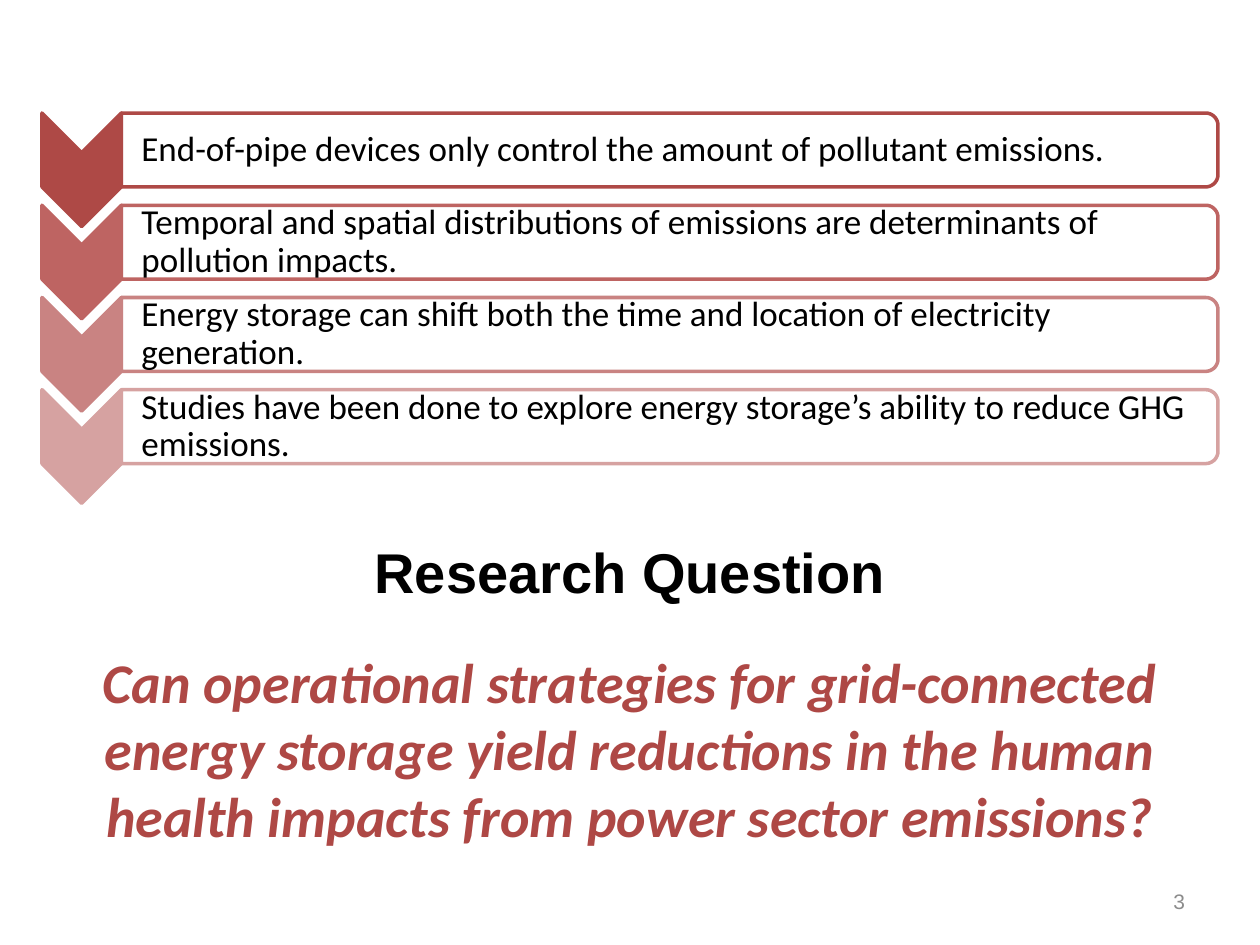
import math
from lxml import etree
from pptx import Presentation
from pptx.dml.color import RGBColor
from pptx.enum import text as t
from pptx.oxml import ns
from pptx.util import Pt

BLACK = RGBColor(0, 0, 0)
WHITE = RGBColor(255, 255, 255)
GRAY = RGBColor(0x8C, 0x8C, 0x8C)
RED = RGBColor(0xAE, 0x48, 0x45)

POINTS = [
    ("End-of-pipe devices only control the amount of pollutant emissions.",
     RGBColor(0xAE, 0x49, 0x46)),
    ("Temporal and spatial distributions of emissions are determinants of pollution impacts.",
     RGBColor(0xBE, 0x64, 0x62)),
    ("Energy storage can shift both the time and location of electricity generation.",
     RGBColor(0xC9, 0x83, 0x82)),
    ("Studies have been done to explore energy storage’s ability to reduce GHG emissions.",
     RGBColor(0xD6, 0xA2, 0xA1)),
]
TITLE = "Research Question"
QUESTION = ("Can operational strategies for grid-connected energy storage yield "
            "reductions in the human health impacts from power sector emissions?")
NUMBER = "3"

LEFT, MID, RIGHT = 24, 69.4, 696
TOP, STEP = 64.6, 52.7
HIGH, TIP, ROUND = 42.2, 22.7, 7


def outline(slide, dots, fill, line):
    dots = [(Pt(x), Pt(y)) for x, y in dots]
    form = slide.shapes.build_freeform(*dots[0], scale=1.0)
    form.add_line_segments(dots[1:], close=True)
    shape = form.convert_to_shape()
    shape.shadow.inherit = False
    shape.fill.solid()
    shape.fill.fore_color.rgb = fill
    shape.line.color.rgb = line
    shape.line.width = Pt(2)
    return shape


def arc(x, y, start):
    """Points of a quarter circle around (x, y), clockwise from start degrees."""
    turns = [math.radians(start + a) for a in range(0, 91, 10)]
    return [(x + ROUND * math.cos(a), y + ROUND * math.sin(a)) for a in turns]


def write(shape, words, font, size, color, align, bold=None, italic=None):
    frame = shape.text_frame
    frame.word_wrap = True
    frame.text = words
    para = frame.paragraphs[0]
    para.alignment = align
    face = para.runs[0].font
    face.name, face.size, face.bold, face.italic = font, Pt(size), bold, italic
    face.color.rgb = color
    return frame


def add_row(slide, top, words, color):
    low, half = top + HIGH, (LEFT + MID) / 2
    outline(slide, [(MID, top), (MID, low), (half, low + TIP), (LEFT, low),
                    (LEFT, top), (half, top + TIP)], color, color)
    bar = outline(slide, [(MID, top), *arc(RIGHT - ROUND, top + ROUND, -90),
                          *arc(RIGHT - ROUND, low - ROUND, 0), (MID, low)],
                  WHITE, color)
    tint = bar.fill._xPr.find(".//" + ns.qn("a:srgbClr"))
    etree.SubElement(tint, ns.qn("a:alpha"), val="90000")
    frame = write(bar, words, "Calibri", 20, BLACK, t.PP_ALIGN.LEFT)
    frame.vertical_anchor = t.MSO_ANCHOR.MIDDLE
    frame.margin_left = Pt(11.4)
    frame.margin_right = frame.margin_top = frame.margin_bottom = Pt(2.9)
    frame.paragraphs[0].line_spacing = 0.9


def main():
    deck = Presentation()
    deck.slide_width, deck.slide_height = Pt(720), Pt(540)
    slide = deck.slides.add_slide(deck.slide_layouts[5])

    for i, (words, color) in enumerate(POINTS):
        add_row(slide, TOP + i * STEP, words, color)

    title = slide.shapes.title
    title.left, title.top, title.width, title.height = Pt(36), Pt(284.4), Pt(648), Pt(84.2)
    frame = write(title, TITLE, "Arial", 32, BLACK, t.PP_ALIGN.CENTER, bold=True)
    frame.vertical_anchor = t.MSO_ANCHOR.MIDDLE

    box = slide.shapes.add_textbox(Pt(516.2), Pt(500.5), Pt(168), Pt(28.8))
    frame = write(box, NUMBER, "Arial", 12, GRAY, t.PP_ALIGN.RIGHT)
    frame.vertical_anchor = t.MSO_ANCHOR.MIDDLE

    box = slide.shapes.add_textbox(Pt(LEFT), Pt(366.5), Pt(RIGHT - LEFT), Pt(162.7))
    write(box, QUESTION, "Calibri", 32, RED, t.PP_ALIGN.CENTER, bold=True, italic=True)

    deck.save("out.pptx")


if __name__ == "__main__":
    main()
